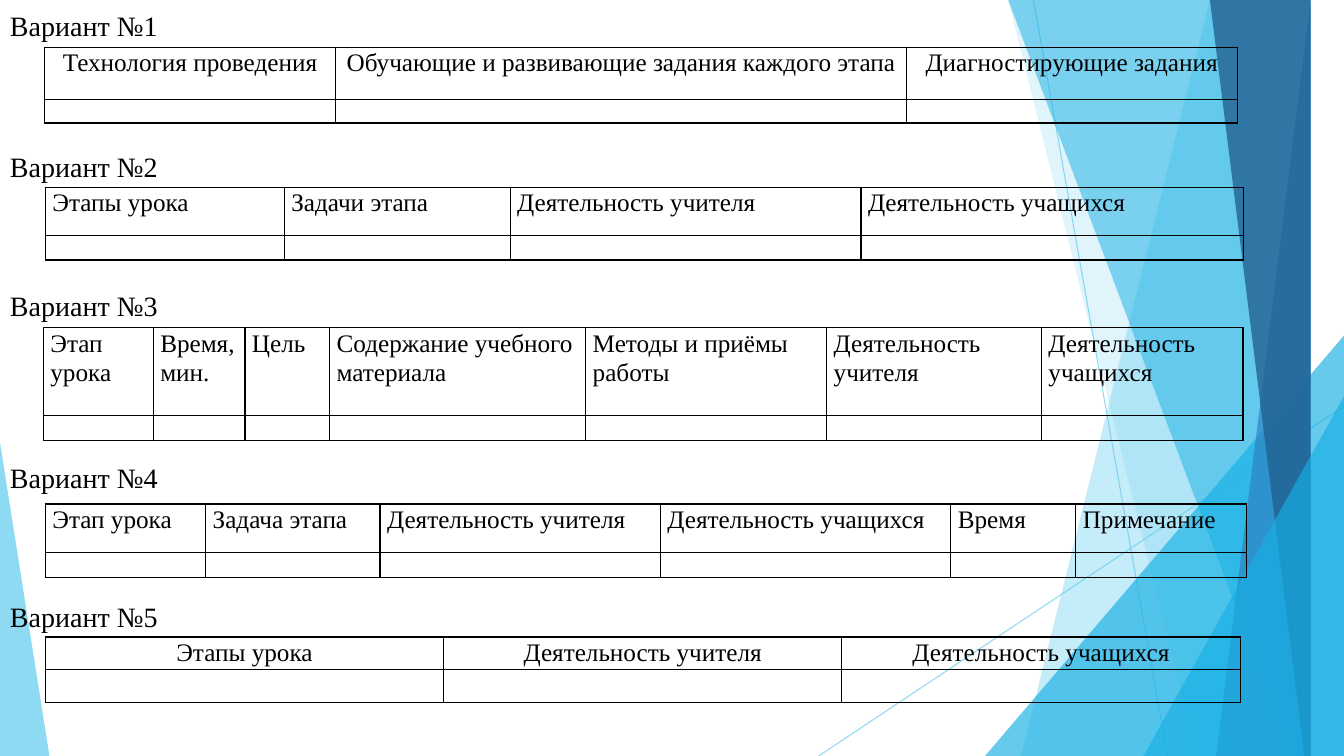
from dataclasses import dataclass

import lxml.etree
import pptx
import pptx.dml.color
import pptx.enum.shapes
import pptx.enum.text
import pptx.oxml.ns
import pptx.presentation
import pptx.slide
import pptx.table
import pptx.util

Inches = pptx.util.Inches
Align = pptx.enum.text.PP_ALIGN
Anchor = pptx.enum.text.MSO_ANCHOR


@dataclass(frozen=True)
class Theme:
    font: str = "Times New Roman"
    text: str = "000000"
    sky: str = "5FCBEF"
    cyan: str = "17B0E4"
    blue: str = "2E83C3"
    navy: str = "226292"
    label_size: int = 20
    cell_size: int = 18
    small_size: int = 12
    line_spacing: float = 1.07


THEME = Theme()
WIDTH, HEIGHT, TOP = 13.33, 7.5, -0.01


@dataclass(frozen=True)
class Ray:
    start: tuple[float, float]
    end: tuple[float, float]


@dataclass(frozen=True)
class Band:
    """A facet reaching the right edge, slanted on its left side."""
    top_x: float
    bottom_x: float
    color: str
    opacity: int


@dataclass(frozen=True)
class Corner:
    """A right triangle; apex is 0 for left and 1 for right."""
    left: float
    top: float
    width: float
    apex: int
    color: str
    opacity: int


@dataclass(frozen=True)
class Variant:
    label_top: float
    left: float
    top: float
    columns: tuple[tuple[str, float], ...]
    rows: tuple[float, float]
    alignment: Align = Align.LEFT
    empty_size: int = THEME.small_size
    label_anchor: Anchor = Anchor.TOP
    label_spacing: float = THEME.line_spacing


BACKDROP = (
    Ray((10.25, 0), (11.58, HEIGHT)),
    Ray((WIDTH, 4.03), (8.12, HEIGHT)),
    Band(12.28, 10.04, THEME.sky, 36),
    Band(10.5, 11.83, THEME.sky, 20),
    Corner(9.77, 3.33, 3.56, 1, THEME.cyan, 66),
    Band(10.21, 12.91, THEME.cyan, 50),
    Band(13.03, 11.92, THEME.blue, 70),
    Band(11.96, 13.18, THEME.navy, 80),
    Corner(11.34, 3.93, 1.99, 1, THEME.cyan, 66),
    Corner(0, 4.39, 0.49, 0, THEME.sky, 70),
)

TEACHER, STUDENTS = "Деятельность учителя", "Деятельность учащихся"
VARIANTS = (
    Variant(0.03, 0.44, 0.47, (
        ("Технология проведения", 2.89),
        ("Обучающие и развивающие задания каждого этапа", 5.66),
        ("Диагностирующие задания", 3.28),
    ), (0.52, 0.23), Align.CENTER, label_anchor=Anchor.MIDDLE, label_spacing=1),
    Variant(1.41, 0.45, 1.86, (
        ("Этапы урока", 2.37), ("Задачи этапа", 2.24), (TEACHER, 3.48), (STUDENTS, 3.79),
    ), (0.48, 0.24)),
    Variant(2.79, 0.43, 3.25, (
        ("Этап урока", 1.09), ("Время, мин.", 0.91), ("Цель", 0.84),
        ("Содержание учебного материала", 2.54), ("Методы и приёмы работы", 2.39),
        (TEACHER, 2.13), (STUDENTS, 2),
    ), (0.87, 0.25)),
    Variant(4.5, 0.45, 5, (
        ("Этап урока", 1.59), ("Задача этапа", 1.73), (TEACHER, 2.78),
        (STUDENTS, 2.88), ("Время", 1.24), ("Примечание", 1.69),
    ), (0.48, 0.25)),
    Variant(5.88, 0.45, 6.32, (
        ("Этапы урока", 3.95), (TEACHER, 3.95), (STUDENTS, 3.95),
    ), (0.31, 0.33), Align.CENTER, THEME.cell_size),
)


def rgb(color: str) -> pptx.dml.color.RGBColor:
    return pptx.dml.color.RGBColor.from_string(color)


def add_child(parent, tag: str, **attributes: str):
    return lxml.etree.SubElement(parent, pptx.oxml.ns.qn(tag), attributes)


def set_opacity(shape, percent: int) -> None:
    for color in shape.element.spPr.iter(pptx.oxml.ns.qn("a:srgbClr")):
        add_child(color, "a:alpha", val=str(percent * 1000))


def paint(shape, color: str, opacity: int) -> None:
    shape.shadow.inherit = False
    shape.fill.solid()
    shape.fill.fore_color.rgb = rgb(color)
    shape.line.fill.background()
    set_opacity(shape, opacity)


def add_ray(slide: pptx.slide.Slide, ray: Ray) -> None:
    connector = slide.shapes.add_connector(
        pptx.enum.shapes.MSO_CONNECTOR.STRAIGHT,
        *(Inches(value) for value in ray.start + ray.end))
    connector.line.color.rgb = rgb(THEME.sky)
    connector.line.width = pptx.util.Pt(0.75)
    set_opacity(connector, 70)
    add_child(connector.element.spPr, "a:effectLst")


def add_band(slide: pptx.slide.Slide, band: Band) -> None:
    builder = slide.shapes.build_freeform(band.top_x, TOP, scale=Inches(1))
    builder.add_line_segments(
        [(WIDTH, TOP), (WIDTH, HEIGHT), (band.bottom_x, HEIGHT)], close=True)
    paint(builder.convert_to_shape(), band.color, band.opacity)


def add_corner(slide: pptx.slide.Slide, corner: Corner) -> None:
    shape = slide.shapes.add_shape(
        pptx.enum.shapes.MSO_SHAPE.ISOSCELES_TRIANGLE, Inches(corner.left),
        Inches(corner.top), Inches(corner.width), Inches(HEIGHT - corner.top))
    shape.adjustments[0] = corner.apex
    paint(shape, corner.color, corner.opacity)


def style_paragraph(paragraph, size: int, spacing: float) -> None:
    paragraph.line_spacing = spacing
    paragraph.font.name = THEME.font
    paragraph.font.size = pptx.util.Pt(size)
    paragraph.font.bold = False
    paragraph.font.color.rgb = rgb(THEME.text)


def add_label(slide: pptx.slide.Slide, text: str, variant: Variant) -> None:
    box = slide.shapes.add_textbox(0, Inches(variant.label_top), Inches(1.68), Inches(0.44))
    frame = box.text_frame
    frame.word_wrap = False
    frame.vertical_anchor = variant.label_anchor
    frame.text = text
    style_paragraph(frame.paragraphs[0], THEME.label_size, variant.label_spacing)


def style_cell(cell: pptx.table._Cell, text: str, variant: Variant) -> None:
    cell.margin_left = cell.margin_right = Inches(0.07)
    cell.margin_top = cell.margin_bottom = 0
    properties = cell._tc.get_or_add_tcPr()
    for side in "LRTB":
        border = add_child(properties, f"a:ln{side}", w=str(pptx.util.Pt(1)))
        add_child(add_child(border, "a:solidFill"), "a:srgbClr", val=THEME.text)
    cell.fill.background()
    cell.text = text
    paragraph = cell.text_frame.paragraphs[0]
    paragraph.alignment = variant.alignment
    size = THEME.cell_size if text else variant.empty_size
    style_paragraph(paragraph, size, THEME.line_spacing)
    if not text:
        add_child(paragraph._p, "a:endParaRPr", sz=str(size * 100))


def add_variant_table(slide: pptx.slide.Slide, variant: Variant) -> None:
    width = sum(column_width for _, column_width in variant.columns)
    table = slide.shapes.add_table(
        len(variant.rows), len(variant.columns), Inches(variant.left),
        Inches(variant.top), Inches(width), Inches(sum(variant.rows))).table
    table.first_row = table.horz_banding = False
    for row, height in zip(table.rows, variant.rows):
        row.height = Inches(height)
    for index, (heading, column_width) in enumerate(variant.columns):
        table.columns[index].width = Inches(column_width)
        for row_index, text in enumerate((heading, "")):
            style_cell(table.cell(row_index, index), text, variant)


def main() -> None:
    presentation = pptx.Presentation()
    presentation.slide_width, presentation.slide_height = Inches(WIDTH), Inches(HEIGHT)
    slide = presentation.slides.add_slide(presentation.slide_layouts[6])
    painters = {Ray: add_ray, Band: add_band, Corner: add_corner}
    for item in BACKDROP:
        painters[type(item)](slide, item)
    for number, variant in enumerate(VARIANTS, start=1):
        add_label(slide, f"Вариант №{number}", variant)
        add_variant_table(slide, variant)
    presentation.save("out.pptx")


if __name__ == "__main__":
    main()
